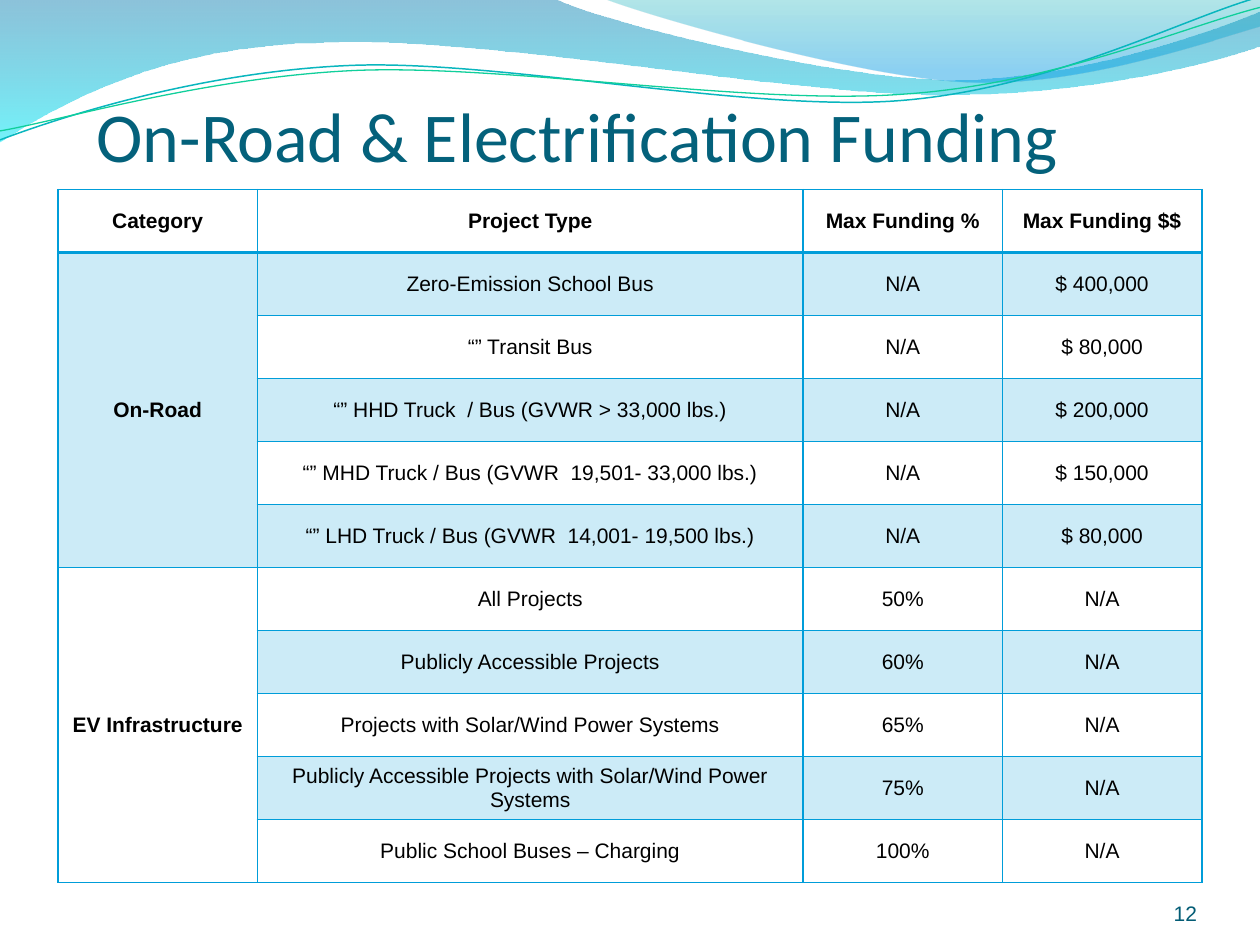
from dataclasses import dataclass
from math import cos, radians, sin
from lxml.etree import SubElement as Sub
from pptx import Presentation as Deck
from pptx.dml.color import RGBColor as Rgb
from pptx.enum.text import MSO_ANCHOR as Anchor, PP_ALIGN as Align
from pptx.oxml.ns import qn
from pptx.util import Cm, Pt

HUES = {
    "title": "04617B", "page": "035C75", "text": "000000", "grid": "009DD9",
    "deep": "0079AD", "aqua": "00E9F7", "teal": "00ABB4", "sky": "0099E4",
    "wave": "09B6BE", "mint": "10CF9B",
}
HEAD = ("Category", "Project Type", "Max Funding %", "Max Funding $$")
GROUPS = {
    "On-Road": (
        ("Zero-Emission School Bus", "N/A", "$ 400,000"),
        ("“” Transit Bus", "N/A", "$ 80,000"),
        ("“” HHD Truck  / Bus (GVWR > 33,000 lbs.)", "N/A", "$ 200,000"),
        ("“” MHD Truck / Bus (GVWR  19,501- 33,000 lbs.)", "N/A", "$ 150,000"),
        ("“” LHD Truck / Bus (GVWR  14,001- 19,500 lbs.)", "N/A", "$ 80,000"),
    ),
    "EV Infrastructure": (
        ("All Projects", "50%", "N/A"),
        ("Publicly Accessible Projects", "60%", "N/A"),
        ("Projects with Solar/Wind Power Systems", "65%", "N/A"),
        ("Publicly Accessible Projects with Solar/Wind Power Systems", "75%", "N/A"),
        ("Public School Buses – Charging", "100%", "N/A"),
    ),
}
WIDTHS = (4.02, 11, 4.02, 4.02)
ROW = 1.27


@dataclass
class Stop:
    at: float
    hue: str
    alpha: int


@dataclass
class Curve:
    start: tuple
    steps: tuple
    stops: tuple = ()
    hue: str = ""
    width: float = 0
    turn: float = 0
    hub: tuple = (0, 0)


@dataclass
class Label:
    text: str
    box: tuple
    inset: float
    align: Align
    ink: str
    font: dict


CURVES = (
    Curve((0, -0.03), (
        (11.18, -0.03),
        (12.09, 0.43, 16.87, 1.6, 19.25, 1.6),
        (21.67, 1.6, 24.33, 0.66, 25.4, 0.23),
        (25.43, 0.91),
        (24.97, 1.12, 22.1, 1.93, 18.95, 1.91),
        (15.8, 1.91, 9.7, 0.71, 6.53, 0.86),
        (3.28, 0.89, 1.17, 2.11, -0.03, 2.87),
    ), (Stop(0, "deep", 45), Stop(1, "aqua", 55))),
    Curve((12.17, -0.03), (
        (12.93, 0.28, 17.32, 1.57, 19.53, 1.65),
        (21.74, 1.75, 24.41, 0.81, 25.4, 0.53),
        (25.4, 0),
    ), (Stop(0, "teal", 30), Stop(0.8, "sky", 45))),
    Curve((0, 2.82), (
        (1.22, 2.36, 4.01, 1.45, 7.04, 1.32),
        (10.03, 1.19, 15.06, 2.26, 18.11, 2.03),
        (21.16, 1.8, 23.83, 0.38, 25.35, -0.05),
    ), hue="wave", width=0.85, turn=357.3, hub=(12.67, 1.46)),
    Curve((0, 2.64), (
        (1.19, 2.44, 4.17, 1.55, 7.19, 1.42),
        (10.24, 1.3, 15.16, 2.13, 18.21, 1.9),
        (21.23, 1.7, 23.9, 0.53, 25.4, 0.15),
    ), hue="mint", width=0.75, turn=357.3, hub=(12.69, 1.5)),
)
LABELS = (
    Label("On-Road & Electrification Funding", (1.7, 0.64, 22.86, 3.17), 0.25,
          Align.LEFT, "title", {"name": "Calibri", "size": Pt(40), "bold": False}),
    Label("12", (22.02, 17.65, 2.11, 1.02), 0,
          Align.RIGHT, "page", {"name": "Arial", "size": Pt(12), "bold": False}),
)


def paint(obj, vals: dict) -> None:
    for key, val in vals.items():
        setattr(obj, key, val)


def tint(hue: str) -> Rgb:
    return Rgb.from_string(HUES[hue])


def fade(node, pct: int) -> None:
    Sub(node, qn("a:alpha"), val=str(pct * 1000))


def level(curve: Curve, spot: tuple) -> tuple:
    arc = radians(-curve.turn)
    x, y = (a - b for a, b in zip(spot, curve.hub))
    return (Cm(curve.hub[0] + x * cos(arc) - y * sin(arc)),
            Cm(curve.hub[1] + x * sin(arc) + y * cos(arc)))


def bend(shape, steps: tuple) -> None:
    nodes = iter(list(shape._element.iter(qn("a:lnTo"))))
    for step in steps:
        node = next(nodes)
        if len(step) == 6:
            node.tag = qn("a:cubicBezTo")
            for _ in range(2):
                spare = next(nodes)
                node.append(spare[0])
                spare.getparent().remove(spare)


def sweep(slide, curve: Curve) -> None:
    spots = [step[i:i + 2] for step in curve.steps for i in range(0, len(step), 2)]
    pen = slide.shapes.build_freeform(*level(curve, curve.start))
    pen.add_line_segments([level(curve, s) for s in spots], close=bool(curve.stops))
    shape = pen.convert_to_shape()
    bend(shape, curve.steps)
    shape.rotation = curve.turn
    shape.shadow.inherit = False
    if not curve.stops:
        shape.fill.background()
        shape.line.color.rgb = tint(curve.hue)
        shape.line.width = Pt(curve.width)
        return
    shape.line.fill.background()
    shape.fill.gradient()
    shape.fill.gradient_angle = 270
    for slot, stop in zip(shape.fill.gradient_stops, curve.stops):
        slot.position = stop.at
        slot.color.rgb = tint(stop.hue)
    for node, stop in zip(shape._element.spPr.iter(qn("a:srgbClr")), curve.stops):
        fade(node, stop.alpha)


def write(slide, label: Label) -> None:
    frame = slide.shapes.add_textbox(*map(Cm, label.box)).text_frame
    pad = Cm(label.inset)
    paint(frame, {"word_wrap": True, "vertical_anchor": Anchor.BOTTOM,
                  "margin_left": pad, "margin_right": pad,
                  "margin_top": pad, "margin_bottom": pad})
    para = frame.paragraphs[0]
    paint(para, {"text": label.text, "alignment": label.align})
    paint(para.font, label.font)
    para.font.color.rgb = tint(label.ink)


def edge(cell, base: float) -> None:
    props = cell._tc.get_or_add_tcPr()
    for side, width in {"L": 1, "R": 1, "T": 1, "B": base}.items():
        line = Sub(props, qn(f"a:ln{side}"), w=str(Pt(width)))
        Sub(Sub(line, qn("a:solidFill")), qn("a:srgbClr"), val=HUES["grid"])


def fill(cell, text: str, head: bool, bold: bool, band: bool) -> None:
    cell.vertical_anchor = Anchor.MIDDLE
    edge(cell, 2 if head else 1)
    if band:
        cell.fill.solid()
        cell.fill.fore_color.rgb = tint("grid")
        fade(cell._tc.tcPr.find(qn("a:solidFill"))[0], 20)
    else:
        cell.fill.background()
    para = cell.text_frame.paragraphs[0]
    paint(para, {"text": text, "alignment": Align.CENTER})
    paint(para.font, {"name": "Arial", "size": Pt(12), "bold": bold})
    para.font.color.rgb = tint("text")


def chart(slide) -> None:
    rows = [HEAD]
    spans = []
    for name, items in GROUPS.items():
        spans.append((len(rows), len(items)))
        rows += [(name if i == 0 else "", *item) for i, item in enumerate(items)]
    size = (sum(WIDTHS), ROW * len(rows))
    table = slide.shapes.add_table(
        len(rows), len(HEAD), *map(Cm, (1.17, 3.82, *size))).table
    paint(table, {"first_row": False, "horz_banding": False})
    table._tbl.tblPr.find(qn("a:tableStyleId")).text = "{2D5ABB26-0587-4C30-8999-92F81FD0307C}"
    for col, width in zip(table.columns, WIDTHS):
        col.width = Cm(width)
    for r, row in enumerate(rows):
        table.rows[r].height = Cm(ROW)
        for c, text in enumerate(row):
            band = r % 2 == 1 if c else 0 < r < spans[1][0]
            fill(table.cell(r, c), text, r == 0, r == 0 or c == 0, band)
    for top, count in spans:
        table.cell(top, 0).merge(table.cell(top + count - 1, 0))


def main() -> None:
    deck = Deck()
    paint(deck, {"slide_width": Cm(25.4), "slide_height": Cm(19.05)})
    slide = deck.slides.add_slide(deck.slide_layouts[6])
    for curve in CURVES:
        sweep(slide, curve)
    for label in LABELS:
        write(slide, label)
    chart(slide)
    deck.save("out.pptx")


if __name__ == "__main__":
    main()
